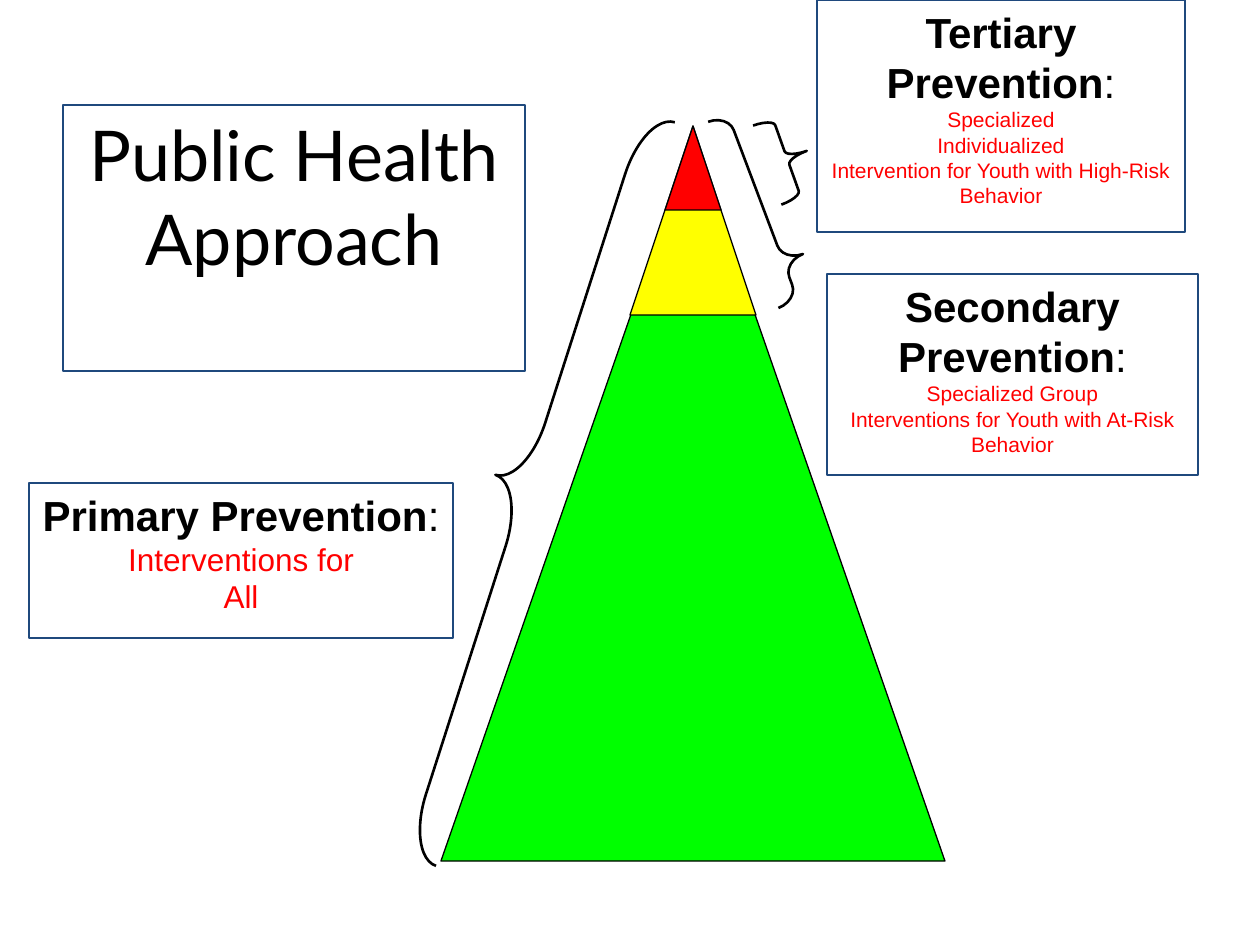
"""Build a public health prevention pyramid slide."""
from dataclasses import dataclass

from pptx import Presentation
from pptx.dml.color import RGBColor as Rgb
from pptx.enum.shapes import MSO_SHAPE as Kind
from pptx.enum.text import MSO_ANCHOR as Anchor, PP_ALIGN as Align
from pptx.util import Emu, Pt

SCALE = 914400 / 126


@dataclass(frozen=True)
class Theme:
    black: str = "000000"
    white: str = "FFFFFF"
    navy: str = "1F497D"
    red: str = "FF0000"
    yellow: str = "FFFF00"
    green: str = "00FF00"
    sans: str = "Arial"
    title: str = "Lato"
    huge: int = 40
    head: int = 24
    body: int = 18
    small: int = 12
    thin: float = 0.75
    thick: float = 1.5


def px(num):
    return Emu(round(num * SCALE))


def apply(obj, vals):
    for name, val in vals.items():
        setattr(obj, name, val)


class Board:
    def __init__(self, slide, theme):
        self.slide = slide
        self.theme = theme

    def shape(self, kind, area, fill, line, width):
        item = self.slide.shapes.add_shape(kind, *map(px, area))
        item.shadow.inherit = False
        if fill:
            item.fill.solid()
            item.fill.fore_color.rgb = Rgb.from_string(fill)
        else:
            item.fill.background()
        item.line.color.rgb = Rgb.from_string(line)
        item.line.width = Pt(width)
        return item

    def peak(self, area, fill):
        self.shape(Kind.ISOSCELES_TRIANGLE, area, fill,
                   self.theme.black, self.theme.thin)

    def brace(self, kind, area, turn, curl, point):
        item = self.shape(kind, area, None, self.theme.black, self.theme.thick)
        item.rotation = turn
        item.adjustments[0] = curl
        item.adjustments[1] = point

    def run(self, para, text, size, color, face, bold=False):
        font_run = para.add_run()
        font_run.text = text
        apply(font_run.font, {"size": Pt(size), "name": face, "bold": bold})
        font_run.font.color.rgb = Rgb.from_string(color)

    def box(self, area):
        theme = self.theme
        frame = self.shape(Kind.RECTANGLE, area, theme.white,
                           theme.navy, theme.thin).text_frame
        apply(frame, {"word_wrap": True, "vertical_anchor": Anchor.TOP})
        frame.paragraphs[0].alignment = Align.CENTER
        return frame

    def title(self, area, text):
        theme = self.theme
        self.run(self.box(area).paragraphs[0], text,
                 theme.huge, theme.black, theme.title)

    def card(self, area, head, size, lines):
        theme = self.theme
        frame = self.box(area)
        top = frame.paragraphs[0]
        self.run(top, head, theme.head, theme.black, theme.sans, True)
        self.run(top, ":", theme.head, theme.black, theme.sans)
        for text in lines:
            para = frame.add_paragraph()
            para.alignment = Align.CENTER
            self.run(para, text, size, theme.red, theme.sans)


def main():
    deck = Presentation()
    apply(deck, {"slide_width": px(1260), "slide_height": px(945)})
    theme = Theme()
    board = Board(deck.slides.add_slide(deck.slide_layouts[6]), theme)

    for area, fill in (
        ((441, 136, 504, 725), theme.green),
        ((630, 126, 126, 189), theme.yellow),
        ((665, 126, 56, 84), theme.red),
    ):
        board.peak(area, fill)

    for kind, area, turn, curl, point in (
        (Kind.LEFT_BRACE, (494, 94, 63, 781), 17.8, 1.03, 0.5),
        (Kind.RIGHT_BRACE, (766, 116, 42, 84), 340.3, 0.17, 0.5),
        (Kind.RIGHT_BRACE, (742, 108, 42, 199), 339.3, 0.4, 0.79),
    ):
        board.brace(kind, area, turn, curl, point)

    for area, head, size, lines in (
        ((29, 483, 424, 155), "Primary Prevention", theme.body,
         ("Interventions for", "All")),
        ((827, 274, 371, 201), "Secondary Prevention", theme.small,
         ("Specialized Group",
          "Interventions for Youth with At-Risk Behavior")),
        ((817, 0, 368, 232), "Tertiary Prevention", theme.small,
         ("Specialized", "Individualized",
          "Intervention for Youth with High-Risk Behavior")),
    ):
        board.card(area, head, size, lines)

    board.title((63, 105, 462, 266), "Public Health Approach")
    deck.save("out.pptx")


if __name__ == "__main__":
    main()
